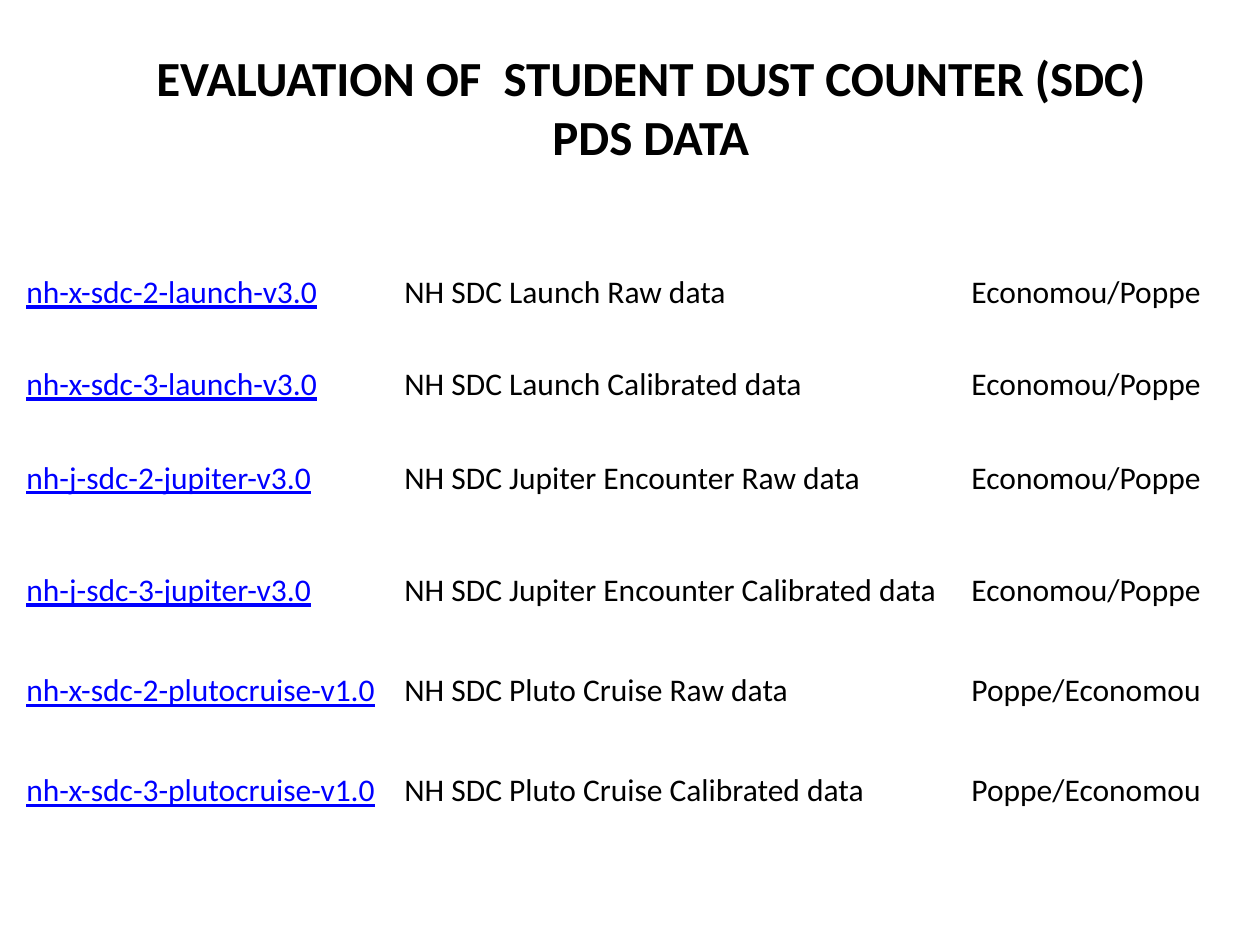
from pptx import Presentation
from pptx.dml.color import RGBColor
from pptx.enum import text
from pptx.util import Inches, Pt

TITLE = "EVALUATION OF  STUDENT DUST COUNTER (SDC) PDS DATA"
DATASETS = [
    ("nh-x-sdc-2-launch-v3.0", "NH SDC Launch Raw data", "Economou/Poppe"),
    ("nh-x-sdc-3-launch-v3.0", "NH SDC Launch Calibrated data", "Economou/Poppe"),
    ("nh-j-sdc-2-jupiter-v3.0", "NH SDC Jupiter Encounter Raw data", "Economou/Poppe"),
    ("nh-j-sdc-3-jupiter-v3.0", "NH SDC Jupiter Encounter Calibrated data", "Economou/Poppe"),
    ("nh-x-sdc-2-plutocruise-v1.0", "NH SDC Pluto Cruise Raw data", "Poppe/Economou"),
    ("nh-x-sdc-3-plutocruise-v1.0", "NH SDC Pluto Cruise Calibrated data", "Poppe/Economou"),
]
COLUMN_WIDTHS = [3, 4.5, 2.42, 5.25]  # the last column is empty
ROW_HEIGHTS = [0.81, 0.65, 0.84, 0.94, 0.65, 0.94]
BLACK, LINK_BLUE = "000000", "0000FF"


def style(paragraph, size, color, bold=False, underline=False):
    font = paragraph.font
    font.name, font.size = "Calibri", Pt(size)
    font.bold, font.underline = bold, underline
    font.color.rgb = RGBColor.from_string(color)


def add_title(slide):
    box = slide.shapes.add_textbox(Inches(0.83), Inches(0.33), Inches(8.67), Inches(1.38))
    frame = box.text_frame
    frame.word_wrap = True
    frame.text = TITLE
    heading = frame.paragraphs[0]
    heading.alignment = text.PP_ALIGN.CENTER
    style(heading, 28, BLACK, bold=True)


def add_datasets(slide):
    table = slide.shapes.add_table(
        len(DATASETS), len(COLUMN_WIDTHS), Inches(0.17), Inches(1.92),
        Inches(sum(COLUMN_WIDTHS)), Inches(sum(ROW_HEIGHTS))).table
    table.first_row = table.horz_banding = False
    for column, width in zip(table.columns, COLUMN_WIDTHS):
        column.width = Inches(width)
    for row, height, dataset in zip(table.rows, ROW_HEIGHTS, DATASETS):
        row.height = Inches(height)
        for cell in row.cells:
            cell.fill.background()
            cell.vertical_anchor = text.MSO_ANCHOR.MIDDLE
            cell.margin_left = cell.margin_right = Inches(0.04)
            cell.margin_top = cell.margin_bottom = Inches(0.04)
        for index, (cell, entry) in enumerate(zip(row.cells, dataset)):
            is_id = index == 0
            cell.text = entry
            style(cell.text_frame.paragraphs[0], 18,
                  LINK_BLUE if is_id else BLACK, underline=is_id)


def main():
    deck = Presentation()
    deck.slide_width, deck.slide_height = Inches(10), Inches(7.5)
    slide = deck.slides.add_slide(deck.slide_layouts[6])
    add_datasets(slide)
    add_title(slide)
    deck.save("out.pptx")


if __name__ == "__main__":
    main()
